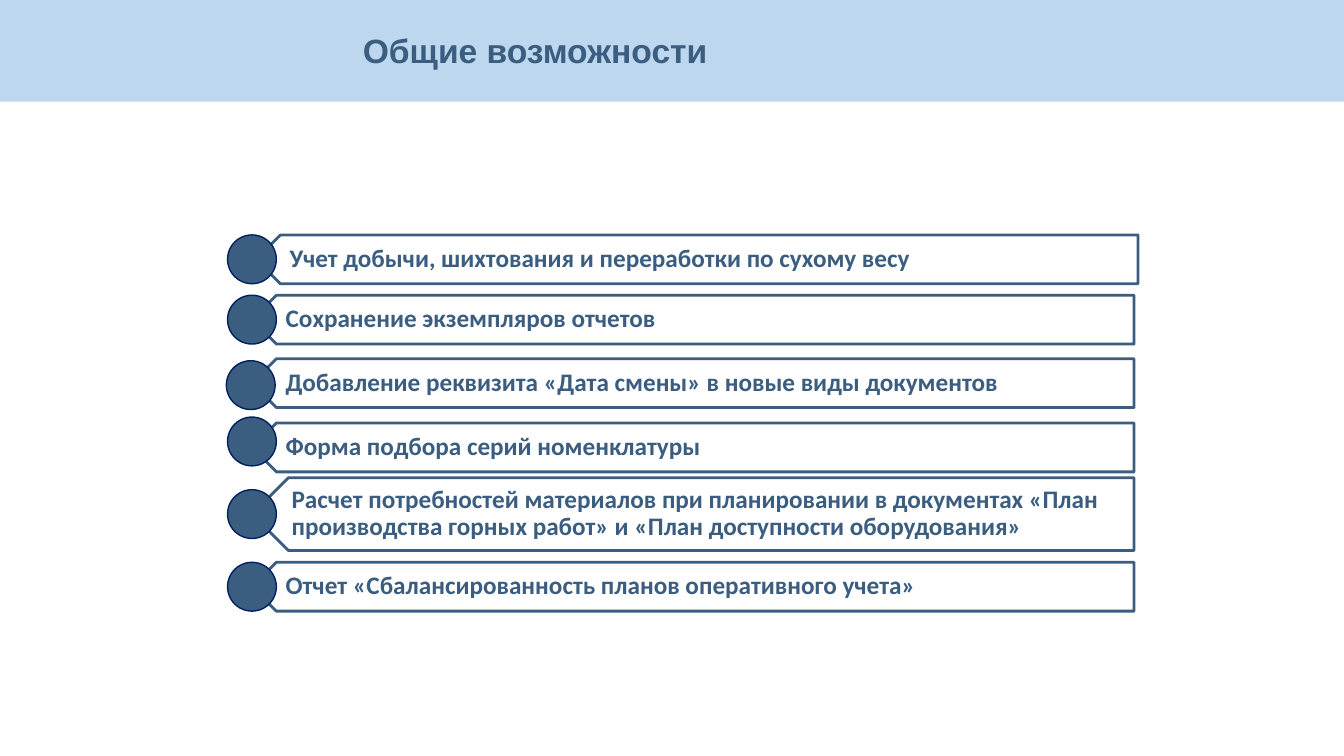
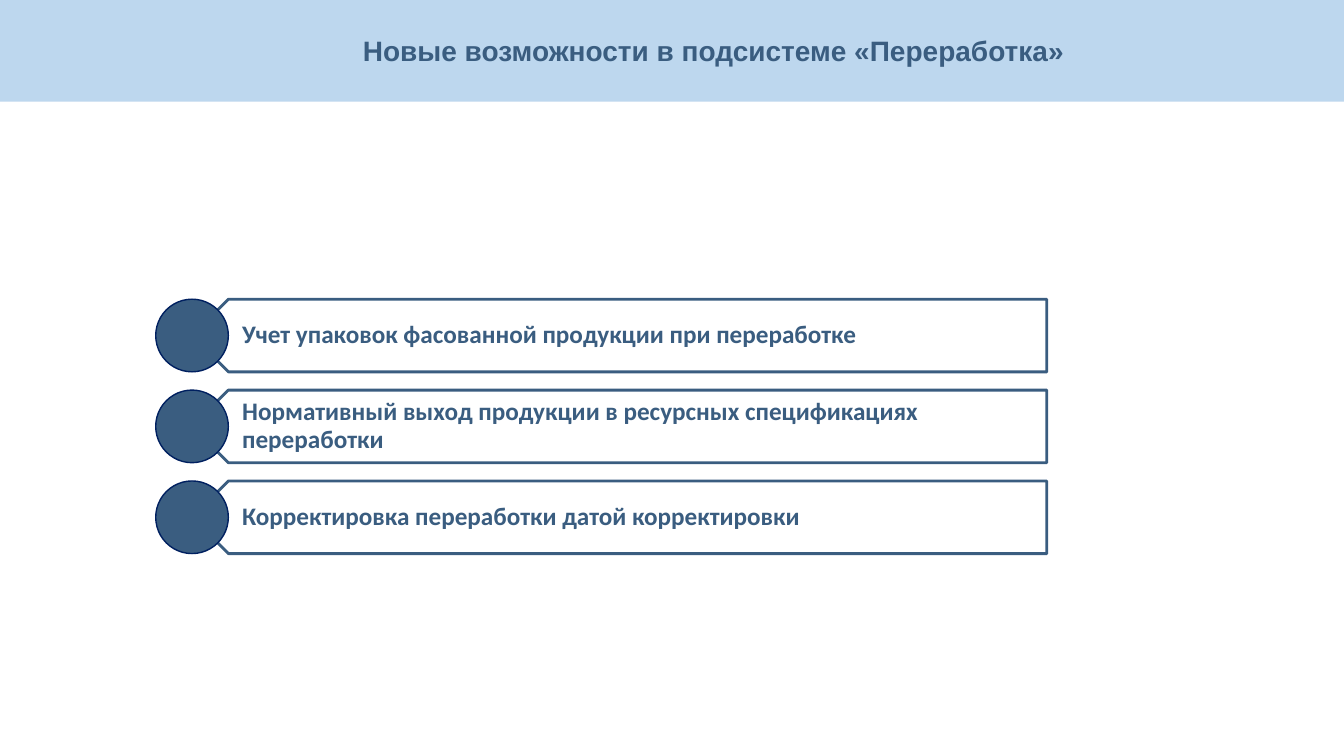
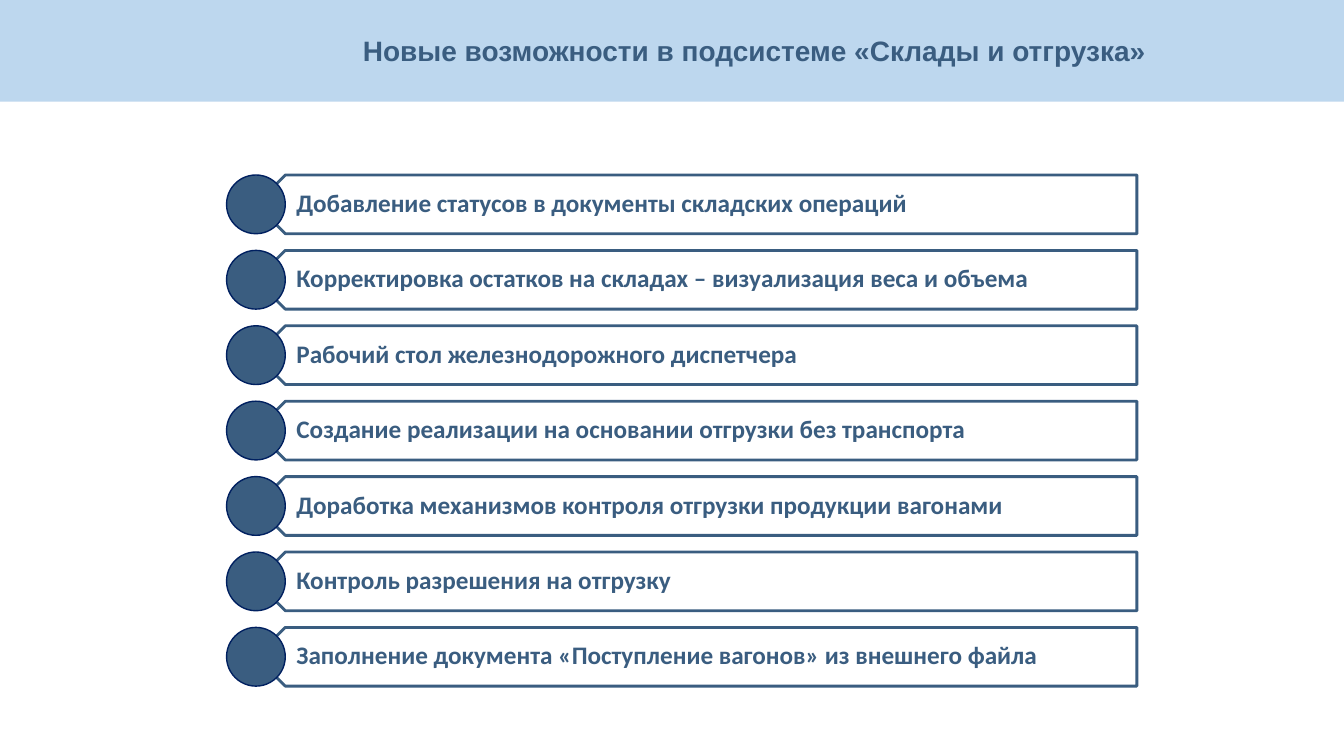
from dataclasses import dataclass

from pptx import Presentation
from pptx.dml.color import RGBColor
from pptx.enum.shapes import MSO_SHAPE
from pptx.enum.text import MSO_ANCHOR, MSO_AUTO_SIZE, PP_ALIGN
from pptx.util import Cm, Pt

RECTANGLE, PLATE, DOT = MSO_SHAPE.RECTANGLE, MSO_SHAPE.PENTAGON, MSO_SHAPE.OVAL
MIDDLE, LEFT, NO_AUTOFIT = MSO_ANCHOR.MIDDLE, PP_ALIGN.LEFT, MSO_AUTO_SIZE.NONE

SLIDE_WIDTH, SLIDE_HEIGHT = 33.87, 19.05
BAND_COLOUR, MAIN_COLOUR, DOT_LINE, WHITE = "BDD7EE", "3A5D80", "002060", "FFFFFF"
TITLE_LAYOUT = 5


@dataclass
class Row:
    text: str
    top: float
    height: float
    plate_shift: float = 0
    dot_shift: tuple = (0, 0)


def even_rows(texts, top, height, pitch):
    return [Row(text, top + index * pitch, height) for index, text in enumerate(texts)]


SLIDES = [
    {
        "title": "Общие возможности", "title_size": 24, "title_width": 18.59,
        "plate_left": 6.35, "plate_width": 22.23, "dot_size": 1.23,
        "rows": [
            Row("Учет добычи, шихтования и переработки по сухому весу", 5.92, 1.23, plate_shift=0.1),
            Row("Сохранение экземпляров отчетов", 7.44, 1.23),
            Row("Добавление реквизита «Дата смены» в новые виды документов", 9.04, 1.23,
                dot_shift=(-0.03, 0.05)),
            Row("Форма подбора серий номенклатуры", 10.66, 1.23, dot_shift=(0, -0.15)),
            Row("Расчет потребностей материалов при планировании в документах «План производства "
                "горных работ» и «План доступности оборудования»", 12.04, 1.83),
            Row("Отчет «Сбалансированность планов оперативного учета»", 14.17, 1.23),
        ],
    },
    {
        "title": "Новые возможности в подсистеме «Переработка»",
        "title_size": 20, "title_width": 22.05,
        "plate_left": 4.84, "plate_width": 21.54, "dot_size": 1.83,
        "rows": even_rows([
            "Учет упаковок фасованной продукции при переработке",
            "Нормативный выход продукции в ресурсных спецификациях переработки",
            "Корректировка переработки датой корректировки",
        ], top=7.54, height=1.83, pitch=2.29),
    },
    {
        "title": "Новые возможности в подсистеме «Склады и отгрузка»",
        "title_size": 20, "title_width": 24.54,
        "plate_left": 6.45, "plate_width": 22.2, "dot_size": 1.48,
        "rows": even_rows([
            "Добавление статусов в документы складских операций",
            "Корректировка остатков на складах – визуализация веса и объема",
            "Рабочий стол железнодорожного диспетчера",
            "Создание реализации на основании отгрузки без транспорта",
            "Доработка механизмов контроля отгрузки продукции вагонами",
            "Контроль разрешения на отгрузку",
            "Заполнение документа «Поступление вагонов» из внешнего файла",
        ], top=4.41, height=1.48, pitch=1.9),
    },
]


def colour(value):
    return RGBColor.from_string(value)


def add_filled(slide, kind, box, fill, line=None, line_width=1):
    shape = slide.shapes.add_shape(kind, *map(Cm, box))
    shape.shadow.inherit = False
    shape.fill.solid()
    shape.fill.fore_color.rgb = colour(fill)
    if line:
        shape.line.color.rgb = colour(line)
        shape.line.width = Pt(line_width)
    else:
        shape.line.fill.background()
    return shape


def write(shape, text, font_name, size):
    """Put one bold, left-aligned, vertically centred paragraph into the shape."""
    frame = shape.text_frame
    frame.text = text
    frame.word_wrap = True
    frame.auto_size = NO_AUTOFIT
    frame.vertical_anchor = MIDDLE
    paragraph = frame.paragraphs[0]
    paragraph.alignment = LEFT
    paragraph.line_spacing = 0.9
    paragraph.font.name = font_name
    paragraph.font.size = Pt(size)
    paragraph.font.bold = True
    paragraph.font.color.rgb = colour(MAIN_COLOUR)


def add_title(slide, text, size, width):
    title = slide.shapes.title
    title.left, title.top, title.width, title.height = map(Cm, (8.89, 0.43, width, 1.8))
    write(title, text, "Arial", size)


def add_row(slide, row, plate_left, plate_width, dot_size):
    left = plate_left + row.plate_shift
    plate = add_filled(slide, PLATE, (left, row.top, plate_width, row.height),
                       WHITE, MAIN_COLOUR, 2)
    plate.rotation = 180

    indent = row.height / 4
    label = slide.shapes.add_textbox(
        *map(Cm, (left + indent, row.top, plate_width - indent, row.height)))
    write(label, row.text, "Calibri", 18)
    frame = label.text_frame
    frame.margin_left, frame.margin_right = Cm(0.44 * dot_size), Cm(0.36)
    frame.margin_top = frame.margin_bottom = Cm(0.18)

    shift_x, shift_y = row.dot_shift
    dot_left = plate_left - dot_size / 2 + shift_x
    dot_top = row.top + (row.height - dot_size) / 2 + shift_y
    add_filled(slide, DOT, (dot_left, dot_top, dot_size, dot_size), MAIN_COLOUR, DOT_LINE)


def add_band_to_layout(layout, slide):
    """Draw the band on a slide, then move it behind everything in the layout."""
    band = add_filled(slide, RECTANGLE, (0, -0.03, SLIDE_WIDTH, 2.59), BAND_COLOUR)
    layout.shapes.element.insert(2, band.element)


def main():
    presentation = Presentation()
    presentation.slide_width, presentation.slide_height = Cm(SLIDE_WIDTH), Cm(SLIDE_HEIGHT)
    layout = presentation.slide_layouts[TITLE_LAYOUT]
    for content in SLIDES:
        slide = presentation.slides.add_slide(layout)
        add_title(slide, content["title"], content["title_size"], content["title_width"])
        for row in content["rows"]:
            add_row(slide, row, content["plate_left"], content["plate_width"], content["dot_size"])
    add_band_to_layout(layout, presentation.slides[0])
    presentation.save("out.pptx")


if __name__ == "__main__":
    main()
